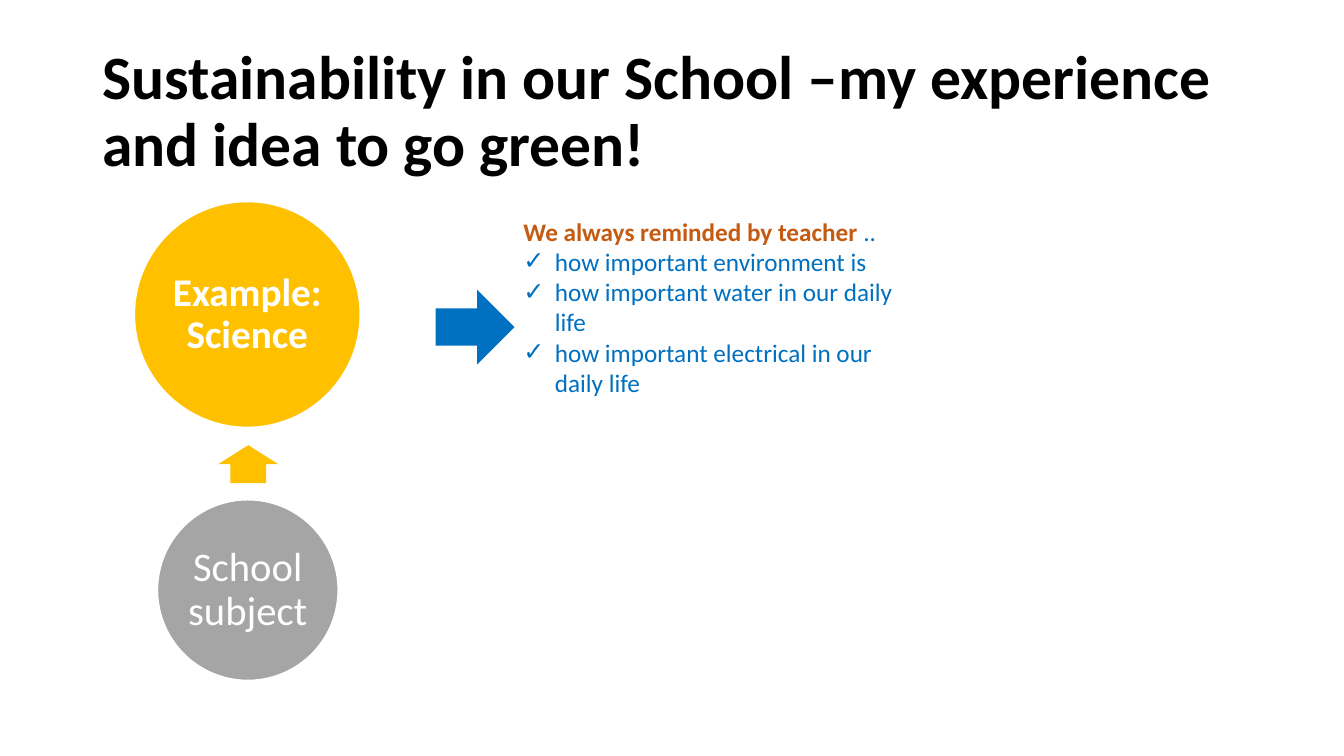
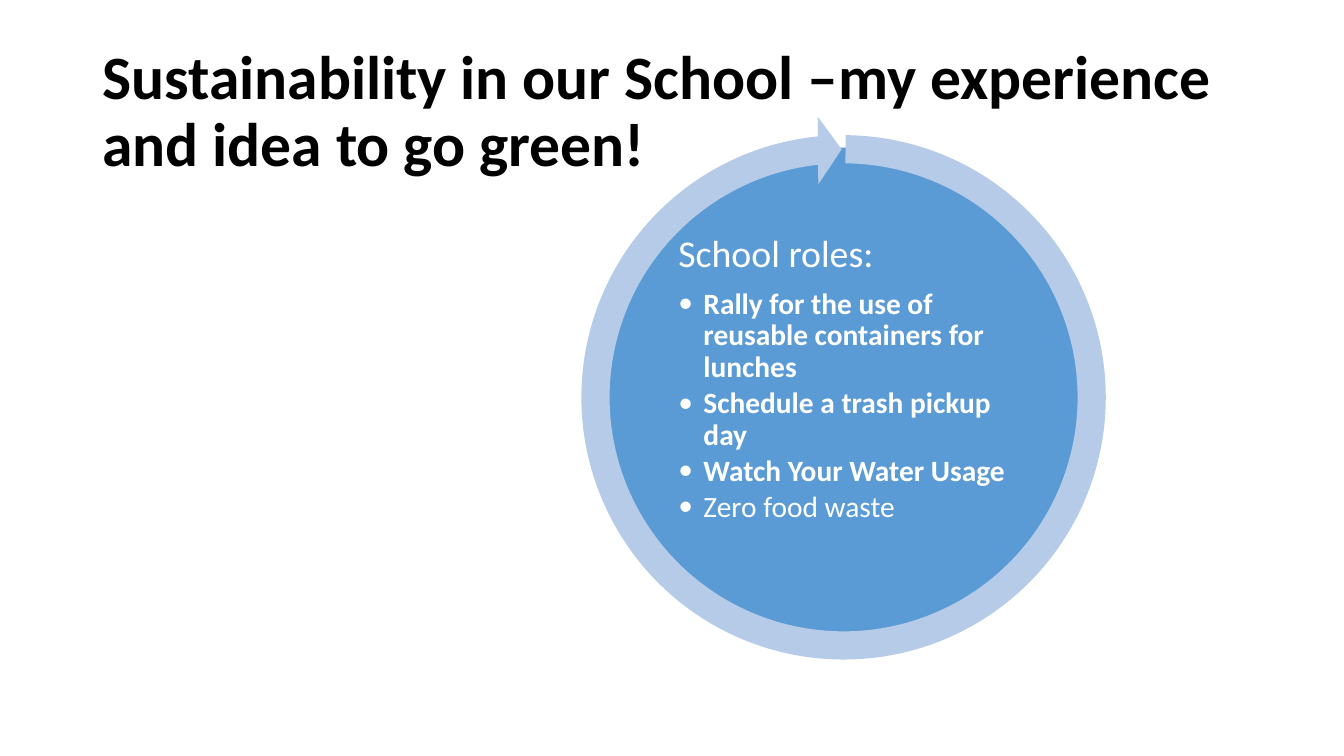
from dataclasses import dataclass

from lxml.etree import SubElement
from pptx import Presentation
from pptx.dml.color import RGBColor
from pptx.enum.shapes import MSO_SHAPE
from pptx.enum.text import MSO_ANCHOR, MSO_AUTO_SIZE, PP_ALIGN
from pptx.oxml.ns import qn
from pptx.presentation import Presentation as Deck
from pptx.slide import Slide
from pptx.text.text import TextFrame
from pptx.util import Emu, Pt

EMU_PER_PX = 9525
TITLE = "Sustainability in our School –my experience and idea to go green!"


@dataclass(frozen=True)
class Theme:
    font: str = "Calibri"
    black: str = "000000"
    white: str = "FFFFFF"
    gray: str = "A5A5A5"
    gold: str = "FFC000"
    rust: str = "C55A11"
    blue: str = "0070C0"
    sky: str = "5B9BD5"
    pale: str = "B5CBE7"
    title_size: int = 44
    subject_size: int = 29
    example_size: int = 28
    roles_size: int = 27
    role_size: int = 21
    body_size: int = 18
    tight: float = 0.9


THEME = Theme()


@dataclass(frozen=True)
class Area:
    left: int
    top: int
    width: int
    height: int

    def emu(self) -> tuple[Emu, Emu, Emu, Emu]:
        return px(self.left), px(self.top), px(self.width), px(self.height)


@dataclass(frozen=True)
class Insets:
    left: int = 0
    top: int = 4
    right: int = 0
    bottom: int = 4


@dataclass(frozen=True)
class Span:
    text: str
    size: int
    color: str = THEME.white
    bold: bool = False


@dataclass(frozen=True)
class Para:
    spans: tuple[Span, ...]
    align: PP_ALIGN = PP_ALIGN.LEFT
    spacing: float = THEME.tight
    after: int = 0
    bullet: str = ""
    indent: int = 0


@dataclass(frozen=True)
class Figure:
    kind: MSO_SHAPE
    area: Area
    fill: str
    outline: str = ""
    adjustments: tuple[float, ...] = ()
    paras: tuple[Para, ...] = ()
    insets: Insets = Insets()
    anchor: MSO_ANCHOR = MSO_ANCHOR.MIDDLE


def px(length: int) -> Emu:
    return Emu(length * EMU_PER_PX)


def write(frame: TextFrame, paras: tuple[Para, ...]) -> None:
    frame.word_wrap = True
    for index, para in enumerate(paras):
        target = frame.add_paragraph() if index else frame.paragraphs[0]
        if para.bullet:
            properties = target._p.get_or_add_pPr()
            properties.set("marL", str(px(para.indent)))
            properties.set("indent", str(-px(para.indent)))
            SubElement(properties, qn("a:buFont")).set("typeface", THEME.font)
            SubElement(properties, qn("a:buChar")).set("char", para.bullet)
        target.alignment = para.align
        target.line_spacing = para.spacing
        target.space_before = Pt(0)
        target.space_after = Pt(para.after)
        for span in para.spans:
            run = target.add_run()
            run.text = span.text
            run.font.name = THEME.font
            run.font.size = Pt(span.size)
            run.font.bold = span.bold
            run.font.color.rgb = RGBColor.from_string(span.color)


def draw(page: Slide, figure: Figure) -> None:
    shape = page.shapes.add_shape(figure.kind, *figure.area.emu())
    shape.shadow.inherit = False
    shape.fill.solid()
    shape.fill.fore_color.rgb = RGBColor.from_string(figure.fill)
    if figure.outline:
        shape.line.color.rgb = RGBColor.from_string(figure.outline)
        shape.line.width = Pt(1)
    else:
        shape.line.fill.background()
    for index, value in enumerate(figure.adjustments):
        shape.adjustments[index] = value
    if figure.paras:
        frame = shape.text_frame
        frame.margin_left = px(figure.insets.left)
        frame.margin_top = px(figure.insets.top)
        frame.margin_right = px(figure.insets.right)
        frame.margin_bottom = px(figure.insets.bottom)
        frame.vertical_anchor = figure.anchor
        write(frame, figure.paras)


def add_page(deck: Deck) -> Slide:
    page = deck.slides.add_slide(deck.slide_layouts.get_by_name("Title Only"))
    title = page.shapes.title
    title.left, title.top, title.width, title.height = Area(88, 38, 1104, 139).emu()
    title.text_frame.auto_size = MSO_AUTO_SIZE.NONE
    title.text_frame.vertical_anchor = MSO_ANCHOR.MIDDLE
    write(title.text_frame, (Para((Span(TITLE, THEME.title_size, THEME.black, True),)),))
    return page


def circle(area: Area, fill: str, label: Span) -> Figure:
    para = Para((label,), align=PP_ALIGN.CENTER)
    return Figure(MSO_SHAPE.OVAL, area, fill, THEME.white, paras=(para,))


def add_subject_page(deck: Deck) -> None:
    page = add_page(deck)
    figures = (
        circle(Area(150, 476, 172, 172), THEME.gray,
               Span("School subject", THEME.subject_size)),
        Figure(MSO_SHAPE.UP_ARROW, Area(208, 424, 57, 36), THEME.gold,
               adjustments=(0.6, 0.5)),
        circle(Area(128, 192, 215, 215), THEME.gold,
               Span("Example: Science", THEME.example_size, bold=True)),
        Figure(MSO_SHAPE.RIGHT_ARROW, Area(415, 276, 75, 71), THEME.blue),
    )
    for figure in figures:
        draw(page, figure)

    heading = Para((
        Span("We always reminded by teacher ", THEME.body_size, THEME.rust, True),
        Span("..", THEME.body_size, THEME.blue),
    ), spacing=1.0)
    reminders = (
        "how important environment is",
        "how important water in our daily life",
        "how important electrical in our daily life",
    )
    items = tuple(
        Para((Span(text, THEME.body_size, THEME.blue),), spacing=1.0, bullet="✓", indent=30)
        for text in reminders
    )
    box = page.shapes.add_textbox(*Area(489, 201, 391, 242).emu())
    write(box.text_frame, (heading, *items))


def add_roles_page(deck: Deck) -> None:
    page = add_page(deck)
    heading = Para((Span("School roles:", THEME.roles_size),), after=9)
    roles = (
        ("Rally for the use of reusable containers for lunches", True),
        ("Schedule a trash pickup day", True),
        ("Watch Your Water Usage", True),
        ("Zero food waste", False),
    )
    items = tuple(
        Para((Span(text, THEME.role_size, bold=bold),), after=3, bullet="•", indent=24)
        for text, bold in roles
    )
    draw(page, Figure(MSO_SHAPE.OVAL, Area(562, 140, 478, 478), THEME.sky, THEME.white,
                      paras=(heading, *items), insets=Insets(14, 14, 8, 14),
                      anchor=MSO_ANCHOR.TOP))
    draw(page, Figure(MSO_SHAPE.CIRCULAR_ARROW, Area(535, 110, 537, 537), THEME.pale,
                      adjustments=(0.05, 3.28, 158.45, 162.27, 0.06)))


def main() -> None:
    deck = Presentation()
    deck.slide_width, deck.slide_height = px(1280), px(720)
    add_subject_page(deck)
    add_roles_page(deck)
    deck.save("out.pptx")


if __name__ == "__main__":
    main()
